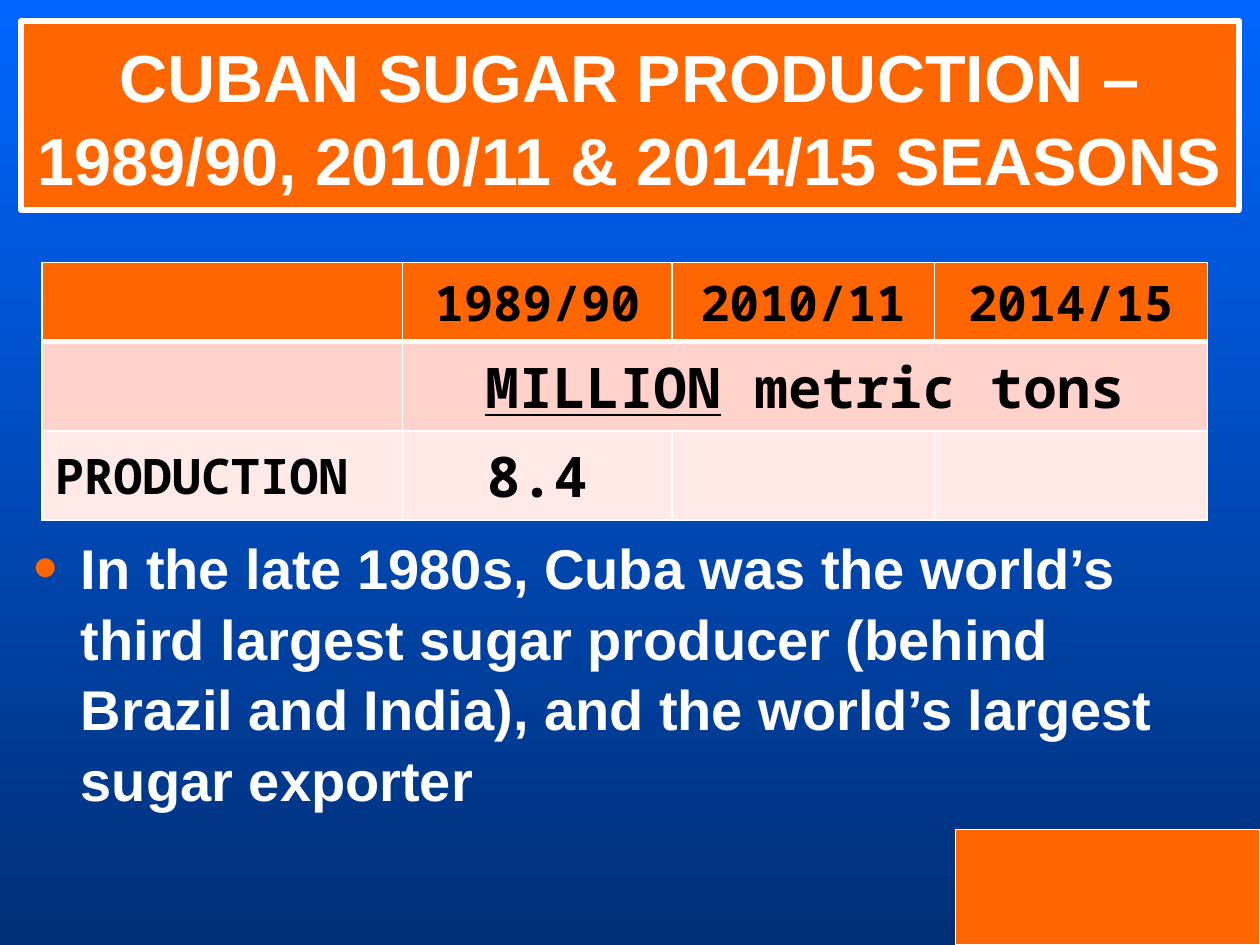
from lxml.etree import SubElement
from pptx import Presentation
from pptx.dml.color import RGBColor
from pptx.enum.shapes import MSO_SHAPE as Kind
from pptx.enum.text import MSO_ANCHOR as Anchor, MSO_AUTO_SIZE as Fit, PP_ALIGN as Align
from pptx.oxml import parse_xml
from pptx.oxml.ns import nsdecls, qn
from pptx.util import Pt

ORANGE, WHITE, BLACK = "FF6600", "FFFFFF", "000000"
MONO = "Noto Sans Mono"
TITLE = "CUBAN SUGAR PRODUCTION – 1989/90, 2010/11 & 2014/15 SEASONS"
POINT = ("In the late 1980s, Cuba was the world’s third largest sugar producer "
         "(behind Brazil and India), and the world’s largest sugar exporter")
HEADS = ["", "1989/90", "2010/11", "2014/15"]
UNIT = ("MILLION", " metric tons")
DATA = ["PRODUCTION", "8.4", "", ""]
COLS = [206, 154, 150, 156]
ROWS = [(45, ORANGE), (51, "FFD3CC"), (51, "FFEAE7")]


def color(code):
    return RGBColor.from_string(code)


def write(para, text, size=32, font="Arial", tint=WHITE, under=False, align=None):
    if align is not None:
        para.alignment = align
    run = para.add_run()
    run.text = text
    face = run.font
    face.name, face.size, face.bold = font, Pt(size), True
    face.underline = under
    face.color.rgb = color(tint)


def place(shape, left, top, width, height):
    shape.left, shape.top = Pt(left), Pt(top)
    shape.width, shape.height = Pt(width), Pt(height)


def paint(shape, width):
    shape.fill.solid()
    shape.fill.fore_color.rgb = color(ORANGE)
    shape.line.color.rgb = color(WHITE)
    shape.line.width = Pt(width)


def edge(cell, **widths):
    props = cell._tc.get_or_add_tcPr()
    for spot, side in enumerate("LRTB"):
        line = parse_xml(f'<a:ln{side} {nsdecls("a")} w="{Pt(widths.get(side, 1))}"/>')
        fill = SubElement(line, qn("a:solidFill"))
        SubElement(fill, qn("a:srgbClr"), val=WHITE)
        props.insert(spot, line)


def bullet(para):
    props = para._p.get_or_add_pPr()
    props.set("marL", str(Pt(27)))
    props.set("indent", str(Pt(-27)))
    tint = SubElement(props, qn("a:buClr"))
    SubElement(tint, qn("a:srgbClr"), val=ORANGE)
    SubElement(props, qn("a:buSzPct"), val="125000")
    SubElement(props, qn("a:buFont"), typeface="Arial")
    SubElement(props, qn("a:buChar"), char="•")


def build_table(slide):
    grid = slide.shapes.add_table(len(ROWS), len(COLS), Pt(24), Pt(150),
                                  Pt(sum(COLS)), Pt(sum(high for high, _ in ROWS))).table
    for col, width in zip(grid.columns, COLS):
        col.width = Pt(width)
    for r, (high, tint) in enumerate(ROWS):
        grid.rows[r].height = Pt(high)
        for cell in grid.rows[r].cells:
            cell.fill.solid()
            cell.fill.fore_color.rgb = color(tint)
            cell.vertical_anchor = Anchor.MIDDLE if r else Anchor.TOP
            edge(cell, T=3 if r == 1 else 1, B=1 if r else 3)
    grid.cell(1, 1).merge(grid.cell(1, 3))
    unit = grid.cell(1, 1).text_frame.paragraphs[0]
    for text in UNIT:
        write(unit, text, font=MONO, tint=BLACK, under=text == UNIT[0], align=Align.CENTER)
    for r, words in ((0, HEADS), (2, DATA)):
        for c, text in enumerate(words):
            if text:
                write(grid.cell(r, c).text_frame.paragraphs[0], text,
                      size=32 if r and c else 28, font=MONO, tint=BLACK,
                      align=Align.CENTER if c else Align.LEFT)


def main():
    deck = Presentation()
    deck.slide_width, deck.slide_height = Pt(720), Pt(540)
    slide = deck.slides.add_slide(deck.slide_layouts[1])

    back = slide.background.fill
    back.gradient()
    back.gradient_angle = 270
    for stop, tint in zip(back.gradient_stops, ("0066FF", "002F76")):
        stop.color.rgb = color(tint)

    block = slide.shapes.add_shape(Kind.RECTANGLE, Pt(546), Pt(474), Pt(174), Pt(66))
    block.shadow.inherit = False
    paint(block, 0.75)

    title, body = slide.placeholders
    place(title, 12, 12, 696, 108)
    paint(title, 3)
    place(body, 12, 299.5, 660, 162.5)
    for shape, anchor in ((title, Anchor.MIDDLE), (body, Anchor.TOP)):
        frame = shape.text_frame
        frame.word_wrap, frame.auto_size = True, Fit.NONE
        frame.vertical_anchor = anchor
        para = frame.paragraphs[0]
        para.space_before, para.line_spacing = Pt(0), 1.05
    write(title.text_frame.paragraphs[0], TITLE, size=38, align=Align.CENTER)
    bullet(body.text_frame.paragraphs[0])
    write(body.text_frame.paragraphs[0], POINT, align=Align.LEFT)

    build_table(slide)
    deck.save("out.pptx")


if __name__ == "__main__":
    main()
